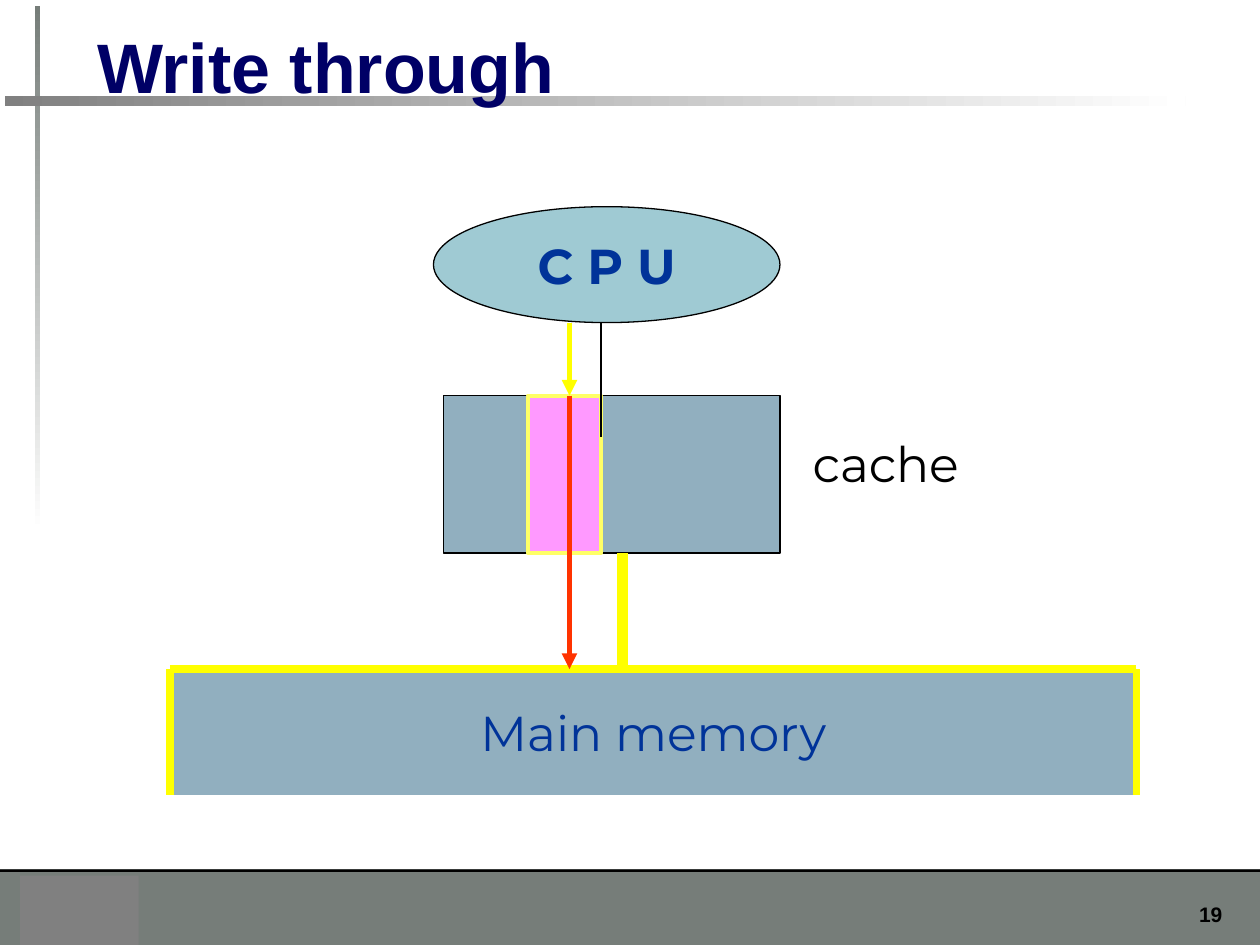
from pptx import Presentation
from pptx.dml.color import RGBColor
from pptx.enum.shapes import MSO_CONNECTOR, MSO_SHAPE
from pptx.enum.text import MSO_ANCHOR, PP_ALIGN
from pptx.oxml.ns import qn
from pptx.util import Inches, Pt
from lxml.etree import SubElement

# The slide is a grid of 100 columns by 75 rows.
COLUMNS, ROWS = 100, 75
CELL = Inches(0.1)

COLORS = {
    "footer": "767D79", "gray": "808080", "white": "FFFFFF", "black": "000000",
    "title": "000066", "label": "003399", "cpu": "9FCAD3", "memory": "91AFBF",
    "block": "FF99FF", "block_edge": "FFFF66", "bus": "FFFF00", "write": "FF3300",
}


def color(name):
    return RGBColor.from_string(COLORS[name])


def grid(*cells):
    return [round(cell * CELL) for cell in cells]


def format_text(shape, text, size, font_name, color_name, bold=False,
                align=PP_ALIGN.LEFT, anchor=MSO_ANCHOR.TOP, wrap=True):
    frame = shape.text_frame
    frame.text = text
    frame.word_wrap = wrap
    frame.vertical_anchor = anchor
    paragraph = frame.paragraphs[0]
    paragraph.alignment = align
    font = paragraph.runs[0].font
    font.name, font.size, font.bold = font_name, Pt(size), bold
    font.color.rgb = color(color_name)


def add_box(slide, box, fill, edge=None, width=0.75, kind=MSO_SHAPE.RECTANGLE):
    shape = slide.shapes.add_shape(kind, *grid(*box))
    shape.shadow.inherit = False
    shape.fill.solid()
    shape.fill.fore_color.rgb = color(fill)
    if edge:
        shape.line.color.rgb = color(edge)
        shape.line.width = Pt(width)
    else:
        shape.line.fill.background()
    return shape


def add_fading_bar(slide, box, start, angle):
    """Bar fading to white; the angle runs counter-clockwise."""
    fill = add_box(slide, box, start).fill
    fill.gradient()
    fill.gradient_angle = angle
    for stop, name, position in zip(fill.gradient_stops, (start, "white"), (0, 1)):
        stop.color.rgb = color(name)
        stop.position = position


def add_line(slide, start, end, color_name, width, arrow=False):
    line = slide.shapes.add_connector(MSO_CONNECTOR.STRAIGHT, *grid(*start, *end))
    line.line.color.rgb = color(color_name)
    line.line.width = Pt(width)
    properties = line._element.spPr
    if arrow:
        SubElement(properties.find(qn("a:ln")), qn("a:tailEnd"), type="triangle")
    SubElement(properties, qn("a:effectLst"))


def add_label(slide, box, text, *style, **options):
    format_text(slide.shapes.add_textbox(*grid(*box)), text, *style, **options)


def add_frame(slide):
    footer_top = 69
    add_box(slide, (0, footer_top, COLUMNS, ROWS - footer_top), "footer")
    add_box(slide, (0, footer_top, COLUMNS, 0.2), "black")
    add_box(slide, (1.6, 69.5, 9.4, 5.5), "gray")
    add_label(slide, (91.7, 71.1, 6.3, 3), "19", 12, "Arial", "black",
              bold=True, align=PP_ALIGN.RIGHT)
    add_fading_bar(slide, (2.8, 0.5, 0.4, 41.7), "footer", 270)
    add_fading_bar(slide, (0.4, 7.6, 93.7, 0.8), "gray", 0)


def add_title(slide, text):
    title = slide.shapes.title
    title.left, title.top, title.width, title.height = grid(6.7, 1.3, 90.6, 7.7)
    format_text(title, text, 40, "Arial", "title", bold=True, anchor=MSO_ANCHOR.BOTTOM)


def add_diagram(slide):
    cpu_top, cpu_bottom = 16.4, 25.6
    cache_top, cache_bottom = 31.4, 43.9
    memory_top, memory_bottom = 53.1, 63.1
    memory_left, memory_right = 13.5, 90.2
    block_left, block_right = 41.9, 47.7
    cache_left, unit_right = 35.2, 61.9
    cache_height = cache_bottom - cache_top
    write_x, bus_x = 45.2, 49.4
    centered = dict(align=PP_ALIGN.CENTER, anchor=MSO_ANCHOR.MIDDLE, wrap=False)

    cpu = add_box(slide, (34.4, cpu_top, 27.5, cpu_bottom - cpu_top), "cpu", "black",
                  kind=MSO_SHAPE.OVAL)
    format_text(cpu, "C P U", 28, "Montserrat", "label", bold=True, **centered)
    add_box(slide, (cache_left, cache_top, unit_right - cache_left, cache_height),
            "memory", "black")
    add_box(slide, (block_left, cache_top, block_right - block_left, cache_height),
            "block", "block_edge", 2.25)
    add_line(slide, (block_right, cpu_bottom), (block_right, 34.7), "black", 0.75)
    memory = add_box(slide, (memory_left, memory_top, memory_right - memory_left,
                             memory_bottom - memory_top), "memory")
    format_text(memory, "Main memory", 28, "Montserrat", "label", **centered)
    add_label(slide, (63.5, 33.9, 15.8, 5.7), "cache", 28, "Montserrat", "black")

    add_line(slide, (memory_left, memory_top), (memory_right, memory_top), "bus", 4.5)
    for x in (memory_left, memory_right):
        add_line(slide, (x, memory_top), (x, memory_bottom), "bus", 4.5)
    add_line(slide, (bus_x, cache_bottom), (bus_x, memory_top), "bus", 6)
    add_line(slide, (write_x, cpu_bottom), (write_x, cache_top), "bus", 3, arrow=True)
    add_line(slide, (write_x, cache_top), (write_x, memory_top), "write", 3, arrow=True)


def main():
    presentation = Presentation()
    presentation.slide_width, presentation.slide_height = grid(COLUMNS, ROWS)
    slide = presentation.slides.add_slide(presentation.slide_layouts[5])
    add_frame(slide)
    add_title(slide, "Write through")
    # The title lies over the frame bars.
    slide.shapes._spTree.append(slide.shapes.title._element)
    add_diagram(slide)
    presentation.save("out.pptx")


if __name__ == "__main__":
    main()
